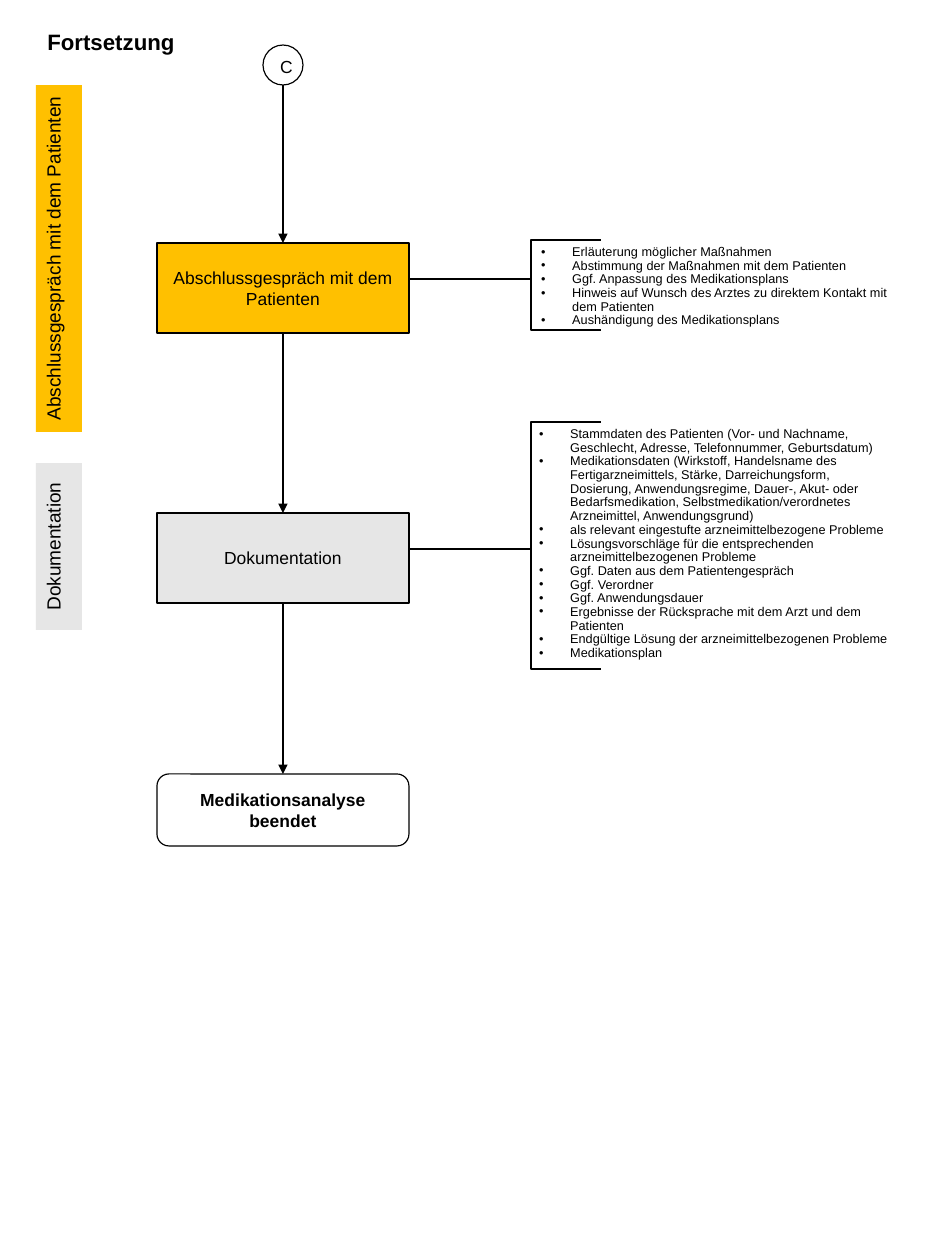
from lxml import etree
from pptx import Presentation
from pptx.dml.color import RGBColor
from pptx.enum.shapes import MSO_CONNECTOR, MSO_SHAPE
from pptx.enum.text import MSO_ANCHOR, PP_ALIGN
from pptx.oxml.ns import qn
from pptx.util import Pt

PX = 8000
STRAIGHT = MSO_CONNECTOR.STRAIGHT
CIRCLE, RECTANGLE = MSO_SHAPE.OVAL, MSO_SHAPE.RECTANGLE
PROCESS = MSO_SHAPE.FLOWCHART_PROCESS
TERMINAL = MSO_SHAPE.FLOWCHART_ALTERNATE_PROCESS
TOP, MIDDLE = MSO_ANCHOR.TOP, MSO_ANCHOR.MIDDLE
LEFT, CENTER = PP_ALIGN.LEFT, PP_ALIGN.CENTER
BLACK, WHITE, AMBER, GREY = "000000", "FFFFFF", "FFC000", "E6E6E6"

TALK = "Abschlussgespräch mit dem Patienten"
RECORD = "Dokumentation"
TALK_POINTS = [
    "Erläuterung möglicher Maßnahmen",
    "Abstimmung der Maßnahmen mit dem Patienten",
    "Ggf. Anpassung des Medikationsplans",
    "Hinweis auf Wunsch des Arztes zu direktem Kontakt mit dem Patienten",
    "Aushändigung des Medikationsplans",
]
RECORD_POINTS = [
    "Stammdaten des Patienten (Vor- und Nachname,\n"
    "Geschlecht, Adresse, Telefonnummer, Geburtsdatum)",
    "Medikationsdaten (Wirkstoff, Handelsname des\n"
    "Fertigarzneimittels, Stärke, Darreichungsform,\n"
    "Dosierung, Anwendungsregime, Dauer-, Akut- oder\n"
    "Bedarfsmedikation, Selbstmedikation/verordnetes\n"
    "Arzneimittel, Anwendungsgrund)",
    "als relevant eingestufte arzneimittelbezogene Probleme",
    "Lösungsvorschläge für die entsprechenden\narzneimittelbezogenen Probleme",
    "Ggf. Daten aus dem Patientengespräch",
    "Ggf. Verordner",
    "Ggf. Anwendungsdauer",
    "Ergebnisse der Rücksprache mit dem Arzt und dem\nPatienten",
    "Endgültige Lösung der arzneimittelbezogenen Probleme",
    "Medikationsplan",
]


def px(*lengths):
    """Turn pixel lengths into EMU."""
    return [length * PX for length in lengths]


def color(code):
    """Turn a hex string into a colour."""
    return RGBColor.from_string(code)


def write(frame, lines, size=11, bold=False, align=CENTER, anchor=TOP, spacing=None, bullet_indent=0):
    """Fill a text frame with one paragraph per line."""
    frame.word_wrap = True
    frame.vertical_anchor = anchor
    for index, line in enumerate(lines):
        paragraph = frame.add_paragraph() if index else frame.paragraphs[0]
        paragraph.text = line
        paragraph.alignment = align
        paragraph.line_spacing = spacing
        for run in paragraph.runs:
            run.font.name = "Arial"
            run.font.size = Pt(size)
            run.font.bold = bold
            run.font.color.rgb = color(BLACK)
        if bullet_indent:
            properties = paragraph._p.get_or_add_pPr()
            properties.set("marL", str(bullet_indent * PX))
            properties.set("indent", str(-bullet_indent * PX))
            etree.SubElement(properties, qn("a:buFont"), typeface="Arial")
            etree.SubElement(properties, qn("a:buChar"), char="•")


class Flowchart:
    """Draws flowchart elements on one slide in a common style."""

    def __init__(self, slide, line_width=0.75):
        """Keep the slide's shapes and the line width."""
        self.shapes = slide.shapes
        self.line_width = Pt(line_width)

    def outline(self, line):
        """Give a line the common colour and width."""
        line.color.rgb = color(BLACK)
        line.width = self.line_width

    def node(self, kind, box, text, fill=None, **text_format):
        """Add an outlined shape with text."""
        node = self.shapes.add_shape(kind, *px(*box))
        node.shadow.inherit = False
        if fill:
            node.fill.solid()
            node.fill.fore_color.rgb = color(fill)
        else:
            node.fill.background()
        self.outline(node.line)
        write(node.text_frame, [text], **text_format)
        return node

    def phase(self, top, height, text, fill):
        """Add a vertical phase label at the left edge."""
        phase = self.node(RECTANGLE, (36, top, 46, height), text, fill, size=12)
        phase.line.fill.background()
        phase.text_frame._txBody.bodyPr.set("vert", "vert270")

    def link(self, start, end, arrow=False):
        """Add a straight line, with an arrowhead at its end if wanted."""
        link = self.shapes.add_connector(STRAIGHT, *px(*start, *end))
        self.outline(link.line)
        properties = link.element.spPr
        if arrow:
            etree.SubElement(properties.find(qn("a:ln")), qn("a:tailEnd"), type="triangle")
        etree.SubElement(properties, qn("a:effectLst"))

    def bracket(self, left, top, width, height):
        """Add a bracket that is open to the right."""
        right, bottom = left + width, top + height
        builder = self.shapes.build_freeform(right, top, scale=PX)
        builder.add_line_segments([(left, top), (left, bottom), (right, bottom)], close=False)
        bracket = builder.convert_to_shape()
        bracket.shadow.inherit = False
        bracket.fill.background()
        self.outline(bracket.line)

    def text(self, box, lines, **text_format):
        """Add a text box."""
        text = self.shapes.add_textbox(*px(*box))
        write(text.text_frame, lines, align=LEFT, **text_format)


def main():
    """Build the slide and save it."""
    deck = Presentation()
    deck.slide_width, deck.slide_height = px(945, 1260)
    chart = Flowchart(deck.slides.add_slide(deck.slide_layouts[6]))

    chart.text((36, 23, 201, 39), ["Fortsetzung"], size=14, bold=True)
    chart.phase(85, 347, TALK, AMBER)
    chart.phase(463, 167, RECORD, GREY)

    axis, step_left, step_width = 283, 157, 252
    chart.node(CIRCLE, (263, 45, 40, 40), "C")
    steps = [
        (PROCESS, 243, 90, TALK, AMBER, False),
        (PROCESS, 513, 90, RECORD, GREY, False),
        (TERMINAL, 774, 72, "Medikationsanalyse beendet", WHITE, True),
    ]
    previous_bottom = 85
    for kind, top, height, text, fill, bold in steps:
        chart.node(kind, (step_left, top, step_width, height), text, fill, bold=bold, anchor=MIDDLE)
        chart.link((axis, previous_bottom), (axis, top), arrow=True)
        previous_bottom = top + height

    bracket_left = 531
    notes = [
        (279, 240, 90, 530, TALK_POINTS),
        (549, 422, 247, 528, RECORD_POINTS),
    ]
    for link_y, top, height, text_left, points in notes:
        chart.link((step_left + step_width, link_y), (bracket_left, link_y))
        chart.bracket(bracket_left, top, 70, height)
        chart.text((text_left, top, 378, height), points, size=8, spacing=0.9, bullet_indent=31)

    deck.save("out.pptx")


if __name__ == "__main__":
    main()
